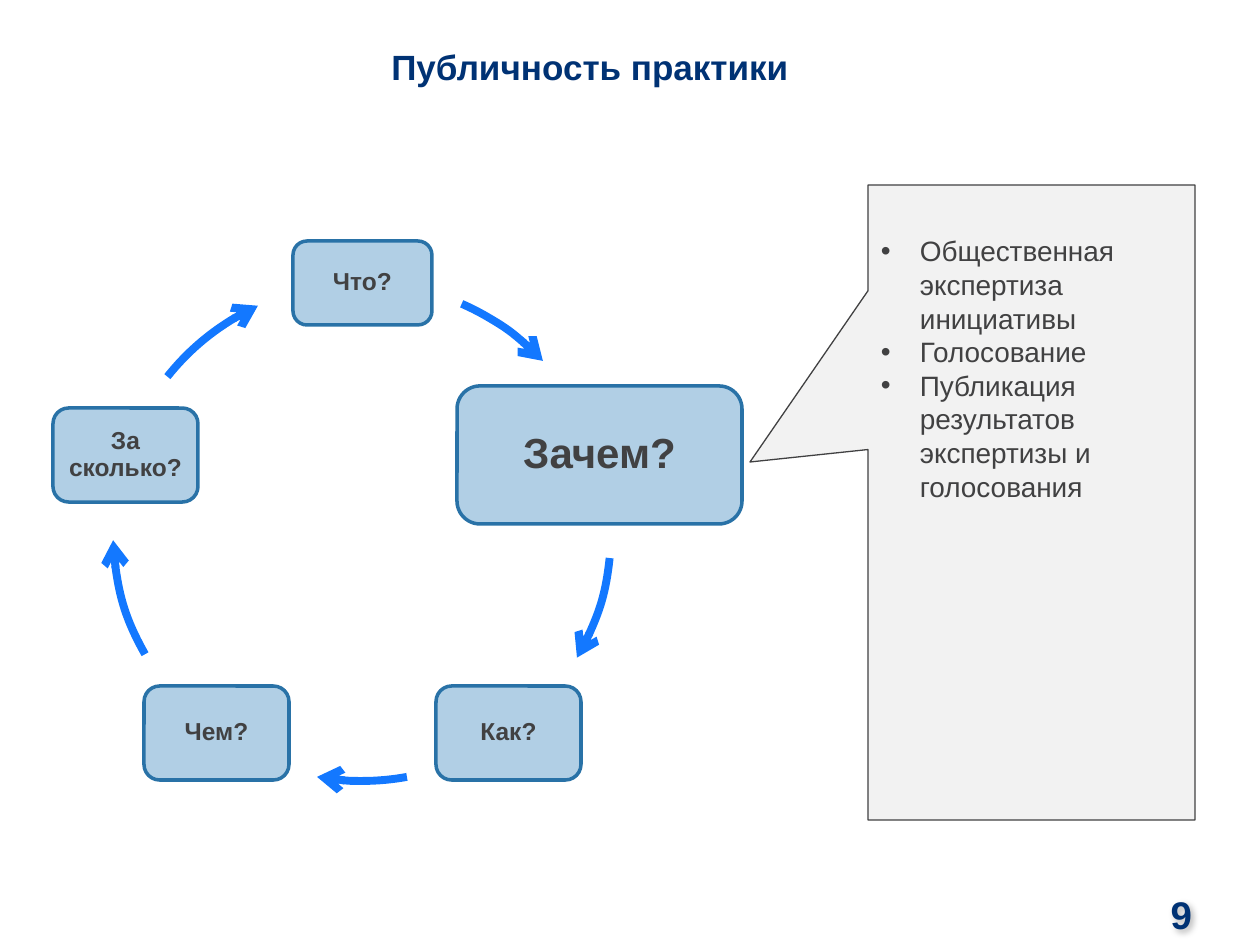
from lxml.etree import SubElement
from pptx import Presentation
from pptx.dml.color import RGBColor
from pptx.enum.shapes import MSO_SHAPE as Shape
from pptx.enum.text import MSO_ANCHOR as Anchor, MSO_AUTO_SIZE as AutoSize, PP_ALIGN as Align
from pptx.oxml.ns import qn
from pptx.util import Emu, Pt

PX_PER_INCH = 126
NAVY, GREY, PALE = "003274", "414142", "F2F2F2"
NODE_FILL, NODE_LINE, ARROW_BLUE = "B1CFE5", "2972A7", "1378FF"

# Cycle steps: text, left, top, width, height, font size
NODES = [
    ("Что?", 293, 241, 139, 84, 14),
    ("Зачем?", 457, 386, 285, 138, 24),
    ("Как?", 436, 686, 145, 94, 14),
    ("Чем?", 144, 686, 145, 94, 14),
    ("За сколько?", 53, 408, 145, 94, 14),
]
# Arrows run clockwise on one ring: start and end angle from the east
RING = (113, 283, 498, 498)
ARROWS = [(293.6, 316.6), (6, 30.3), (79.6, 100.4), (150.6, 178.1), (218.6, 245.3)]
ADJUSTMENT_PER_DEGREE = 0.6

# Callout box and the point its tip touches
CALLOUT = (868, 185, 327, 635)
TIP_X, TIP_Y = 750, 462
POINTS = [
    "Общественная экспертиза инициативы",
    "Голосование",
    "Публикация результатов экспертизы и голосования",
]
BULLET_INDENT = 39


def px(value):
    return Emu(round(value * 914400 / PX_PER_INCH))


def color(hex_code):
    return RGBColor.from_string(hex_code)


def set_all(target, values):
    for name, value in values.items():
        setattr(target, name, value)


def set_frame(frame, left=0, top=0, right=0, bottom=0, anchor=Anchor.MIDDLE):
    set_all(frame, {
        "word_wrap": True, "auto_size": AutoSize.NONE, "vertical_anchor": anchor,
        "margin_left": px(left), "margin_top": px(top),
        "margin_right": px(right), "margin_bottom": px(bottom),
    })


def write(para, text, size, hex_code, align, bold=True):
    para.alignment = align
    span = para.add_run()
    span.text = text
    set_all(span.font, {"name": "Arial", "size": Pt(size), "bold": bold})
    span.font.color.rgb = color(hex_code)


def add_figure(page, kind, bounds, fill, line, width):
    figure = page.shapes.add_shape(kind, *map(px, bounds))
    figure.shadow.inherit = False
    if fill:
        figure.fill.solid()
        figure.fill.fore_color.rgb = color(fill)
    else:
        figure.fill.background()
    figure.line.color.rgb = color(line)
    figure.line.width = Pt(width)
    return figure


def add_title(page, text):
    title = page.shapes.title
    set_all(title, {"left": px(64), "top": px(0), "width": px(1052), "height": px(132)})
    set_frame(title.text_frame)
    write(title.text_frame.paragraphs[0], text, 20, NAVY, Align.CENTER)


def add_page_number(page, text):
    box = page.shapes.add_textbox(px(1138), px(888), px(87), px(52))
    set_frame(box.text_frame, right=33)
    write(box.text_frame.paragraphs[0], text, 22, NAVY, Align.RIGHT)
    # Soft shadow under the digit
    box.shadow.inherit = False
    effects = box._element.spPr.find(qn("a:effectLst"))
    shadow = SubElement(effects, qn("a:outerShdw"), blurRad="50800", dist="25400", dir="2700000")
    shade = SubElement(shadow, qn("a:srgbClr"), val="000000")
    SubElement(shade, qn("a:alpha"), val="30000")


def add_node(page, text, left, top, width, height, size):
    node = add_figure(page, Shape.ROUNDED_RECTANGLE, (left, top, width, height), NODE_FILL, NODE_LINE, 2)
    set_frame(node.text_frame, 8, 8, 8, 8)
    para = node.text_frame.paragraphs[0]
    write(para, text, size, GREY, Align.CENTER)
    para.line_spacing = 0.9


def add_ring_arrow(page, start, end):
    arrow = add_figure(page, Shape.ARC, RING, None, ARROW_BLUE, 4.5)
    for index, angle in enumerate((start, end)):
        arrow.adjustments[index] = angle * ADJUSTMENT_PER_DEGREE
    SubElement(arrow.line._get_or_add_ln(), qn("a:tailEnd"), type="arrow")


def add_bullet(para):
    props = para._p.get_or_add_pPr()
    props.set("marL", str(px(BULLET_INDENT)))
    props.set("indent", str(-px(BULLET_INDENT)))
    SubElement(props, qn("a:buFont"), typeface="Arial")
    SubElement(props, qn("a:buChar"), char="•")


def add_callout(page, items):
    left, top, width, height = CALLOUT
    callout = add_figure(page, Shape.RECTANGULAR_CALLOUT, CALLOUT, PALE, GREY, 0.75)
    callout.adjustments[0] = (TIP_X - left) / width - 0.5
    callout.adjustments[1] = (TIP_Y - top) / height - 0.5
    frame = callout.text_frame
    set_frame(frame, 13, 49, 13, 6, Anchor.TOP)
    for index, item in enumerate(items):
        para = frame.add_paragraph() if index else frame.paragraphs[0]
        add_bullet(para)
        write(para, item, 16, GREY, Align.LEFT, bold=False)


def main():
    deck = Presentation()
    deck.slide_width, deck.slide_height = px(1260), px(945)
    page = deck.slides.add_slide(deck.slide_layouts[5])

    add_title(page, "Публичность практики")
    add_page_number(page, "9")

    # Cycle of questions
    for node, arrow in zip(NODES, ARROWS):
        add_node(page, *node)
        add_ring_arrow(page, *arrow)

    # Explanation of the highlighted question
    add_callout(page, POINTS)

    deck.save("out.pptx")


if __name__ == "__main__":
    main()
